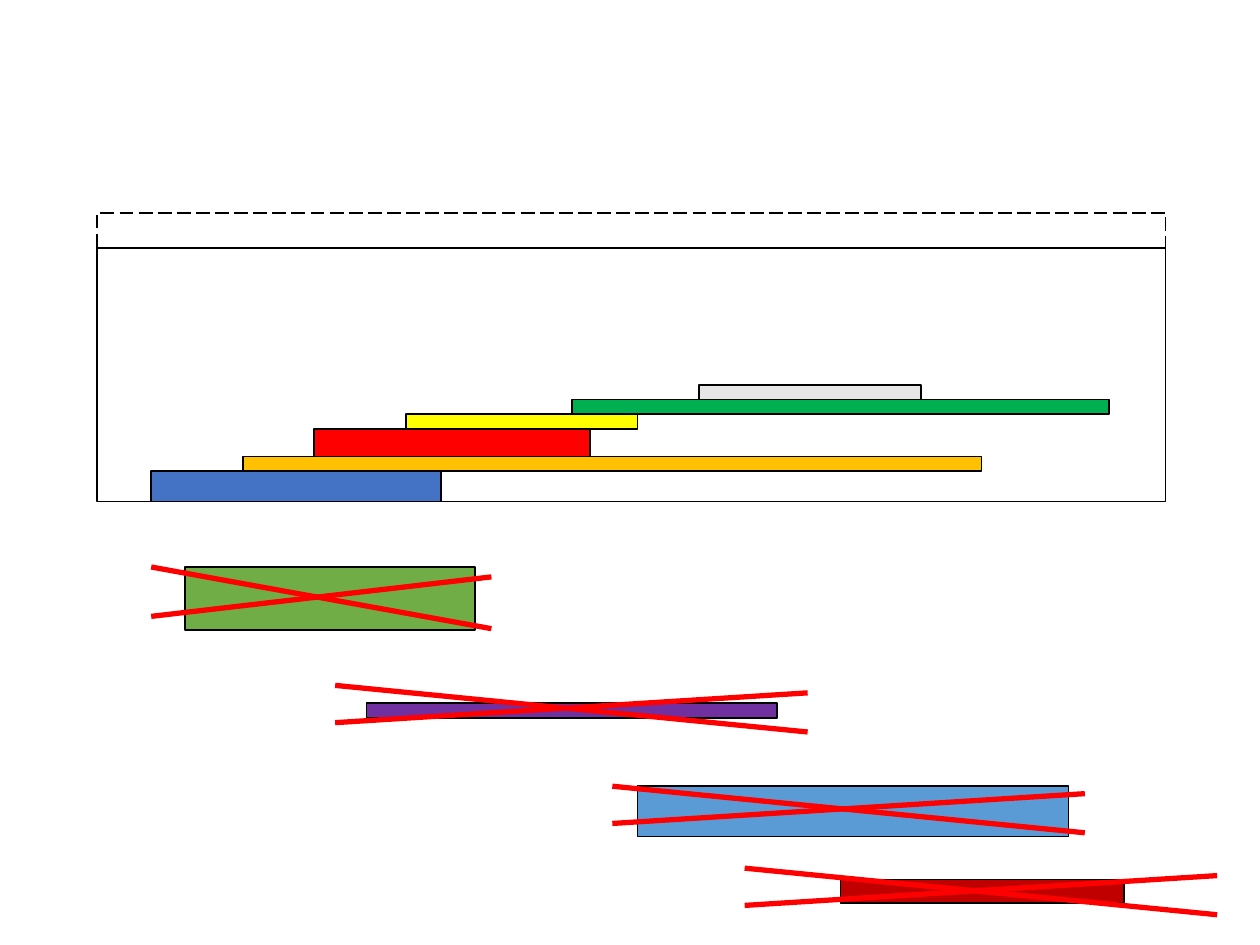
from dataclasses import dataclass

from lxml import etree
from pptx import Presentation
from pptx.dml.color import RGBColor
from pptx.enum.dml import MSO_LINE
from pptx.enum.shapes import MSO_CONNECTOR, MSO_SHAPE
from pptx.oxml.ns import qn
from pptx.util import Inches, Pt

RECTANGLE = MSO_SHAPE.RECTANGLE
STRAIGHT = MSO_CONNECTOR.STRAIGHT
LONG_DASH = MSO_LINE.LONG_DASH

WIDTH, HEIGHT = Inches(10), Inches(7.5)
COLORS = {
    "black": "000000",
    "blue": "4472C4",
    "orange": "FFC000",
    "red": "FF0000",
    "yellow": "FFFF00",
    "green": "00B050",
    "grey": "E7E6E6",
    "olive": "70AD47",
    "purple": "7030A0",
    "sky": "5B9BD5",
    "crimson": "C00000",
}

FLOOR = 53.07
THIN = 1.55
RISE_START, RISE_END = 0.8, 0.16


@dataclass
class Area:
    """Left, top, width and height in percent of the slide."""
    left: float
    top: float
    width: float
    height: float


@dataclass
class Layer:
    left: float
    width: float
    height: float
    color: str


@dataclass
class Rejected:
    bar: Area
    color: str
    cross: Area


CONTAINER = Area(7.7, 26.27, 84.8, 26.8)
LID = Area(7.7, 22.53, 84.8, 3.74)

LAYERS = [
    Layer(12, 23, 3.2, "blue"),
    Layer(19.3, 58.6, THIN, "orange"),
    Layer(24.9, 21.9, 2.93, "red"),
    Layer(32.2, 18.4, THIN, "yellow"),
    Layer(45.4, 42.6, THIN, "green"),
    Layer(55.5, 17.6, THIN, "grey"),
]

REJECTED = [
    Rejected(Area(14.7, 60, 23, 6.67), "olive", Area(12, 60, 27, 6.53)),
    Rejected(Area(29.1, 74.4, 32.6, 1.6), "purple", Area(26.6, 72.53, 37.5, 4.93)),
    Rejected(Area(50.6, 83.2, 34.2, 5.33), "sky", Area(48.6, 83.2, 37.5, 4.93)),
    Rejected(Area(66.7, 93.07, 22.5, 2.53), "crimson", Area(59.1, 91.87, 37.5, 4.93)),
]


def across(share: float) -> int:
    return round(WIDTH * share / 100)


def down(share: float) -> int:
    return round(HEIGHT * share / 100)


def rgb(name: str) -> RGBColor:
    return RGBColor.from_string(COLORS[name])


def draw_box(page, area: Area, color: str = "", dashed: bool = False) -> None:
    box = page.shapes.add_shape(
        RECTANGLE, across(area.left), down(area.top),
        across(area.width), down(area.height))
    box.shadow.inherit = False
    if color:
        box.fill.solid()
        box.fill.fore_color.rgb = rgb(color)
    else:
        box.fill.background()
    box.line.color.rgb = rgb("black")
    box.line.width = Pt(1)
    if dashed:
        box.line.dash_style = LONG_DASH


def draw_cross(page, area: Area) -> None:
    group = page.shapes.add_group_shape()
    for start, end in ((0, 1), (RISE_START, RISE_END)):
        stroke = group.shapes.add_connector(
            STRAIGHT,
            across(area.left), down(area.top + start * area.height),
            across(area.left + area.width), down(area.top + end * area.height))
        stroke.line.color.rgb = rgb("red")
        stroke.line.width = Pt(3)
        etree.SubElement(stroke._element.spPr, qn("a:effectLst"))


def draw_stack(page, layers: list[Layer]) -> None:
    top = FLOOR
    for layer in layers:
        top -= layer.height
        draw_box(page, Area(layer.left, top, layer.width, layer.height), layer.color)


def main() -> None:
    deck = Presentation()
    deck.slide_width, deck.slide_height = WIDTH, HEIGHT
    page = deck.slides.add_slide(deck.slide_layouts[6])

    draw_box(page, CONTAINER)
    draw_box(page, LID, dashed=True)
    draw_stack(page, LAYERS)
    for item in REJECTED:
        draw_box(page, item.bar, item.color)
    for item in REJECTED:
        draw_cross(page, item.cross)

    deck.save("out.pptx")


if __name__ == "__main__":
    main()
